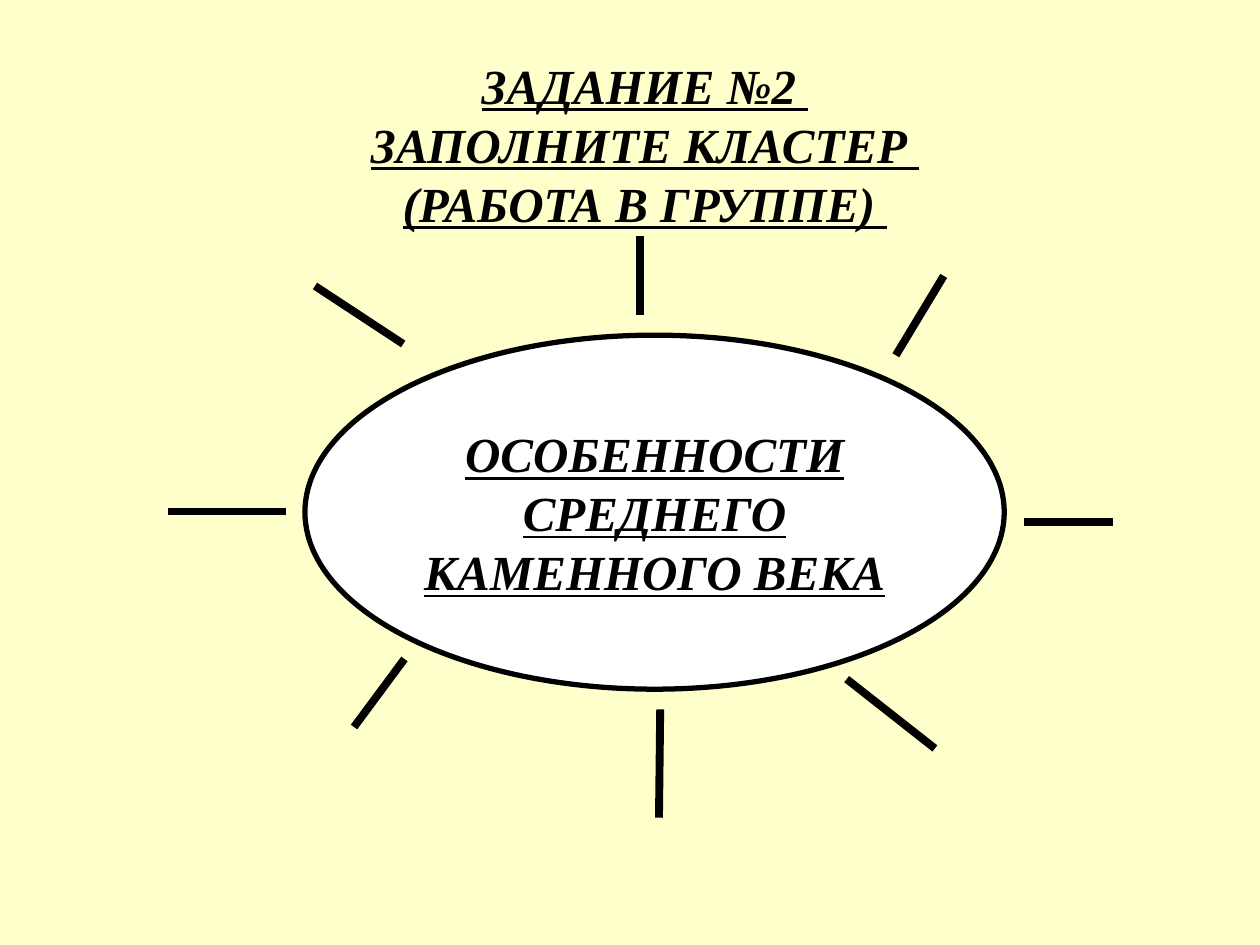
from lxml import etree
from pptx import Presentation
from pptx.dml.color import RGBColor
from pptx.enum import shapes, text
from pptx.oxml import ns
from pptx.util import Inches, Pt

CREAM = RGBColor(0xFF, 0xFF, 0xCC)
WHITE = RGBColor(0xFF, 0xFF, 0xFF)
BLACK = RGBColor(0x00, 0x00, 0x00)

deck = Presentation()
deck.slide_width, deck.slide_height = Inches(10), Inches(7.5)
slide = deck.slides.add_slide(deck.slide_layouts[6])
slide.background.fill.solid()
slide.background.fill.fore_color.rgb = CREAM


def write(frame, lines):
    frame.word_wrap = True
    for i, line in enumerate(lines):
        para = frame.paragraphs[0] if i == 0 else frame.add_paragraph()
        para.text = line
        para.alignment = text.PP_ALIGN.CENTER
        font = para.font
        font.name, font.size = "Times New Roman", Pt(28)
        font.bold = font.italic = font.underline = True
        font.color.rgb = BLACK


# Title
title = slide.shapes.add_textbox(Inches(0.62), Inches(0.39), Inches(9), Inches(1.25))
write(title.text_frame, ["ЗАДАНИЕ №2 ", "ЗАПОЛНИТЕ КЛАСТЕР ", "(РАБОТА В ГРУППЕ) "])

# Central topic
topic = slide.shapes.add_shape(
    shapes.MSO_SHAPE.OVAL, Inches(2.42), Inches(2.66), Inches(5.55), Inches(2.81))
topic.shadow.inherit = False
topic.fill.solid()
topic.fill.fore_color.rgb = WHITE
topic.line.color.rgb = BLACK
topic.line.width = Pt(3)
topic.text_frame.vertical_anchor = text.MSO_ANCHOR.MIDDLE
write(topic.text_frame, ["ОСОБЕННОСТИ СРЕДНЕГО КАМЕННОГО ВЕКА "])

# Rays around the topic: x1, y1, x2, y2
rays = [
    (2.5, 2.27, 3.2, 2.73),
    (6.72, 5.39, 7.42, 5.94),
    (7.49, 2.19, 7.11, 2.82),
    (2.81, 5.77, 3.21, 5.23),
    (5.08, 1.87, 5.08, 2.5),
    (5.24, 5.63, 5.23, 6.49),
    (1.33, 4.06, 2.27, 4.06),
    (8.13, 4.14, 8.83, 4.14),
]
for ends in rays:
    ray = slide.shapes.add_connector(
        shapes.MSO_CONNECTOR.STRAIGHT, *[Inches(v) for v in ends])
    ray.line.color.rgb = BLACK
    ray.line.width = Pt(4.5)
    etree.SubElement(ray._element.spPr, ns.qn("a:effectLst"))

deck.save("out.pptx")
